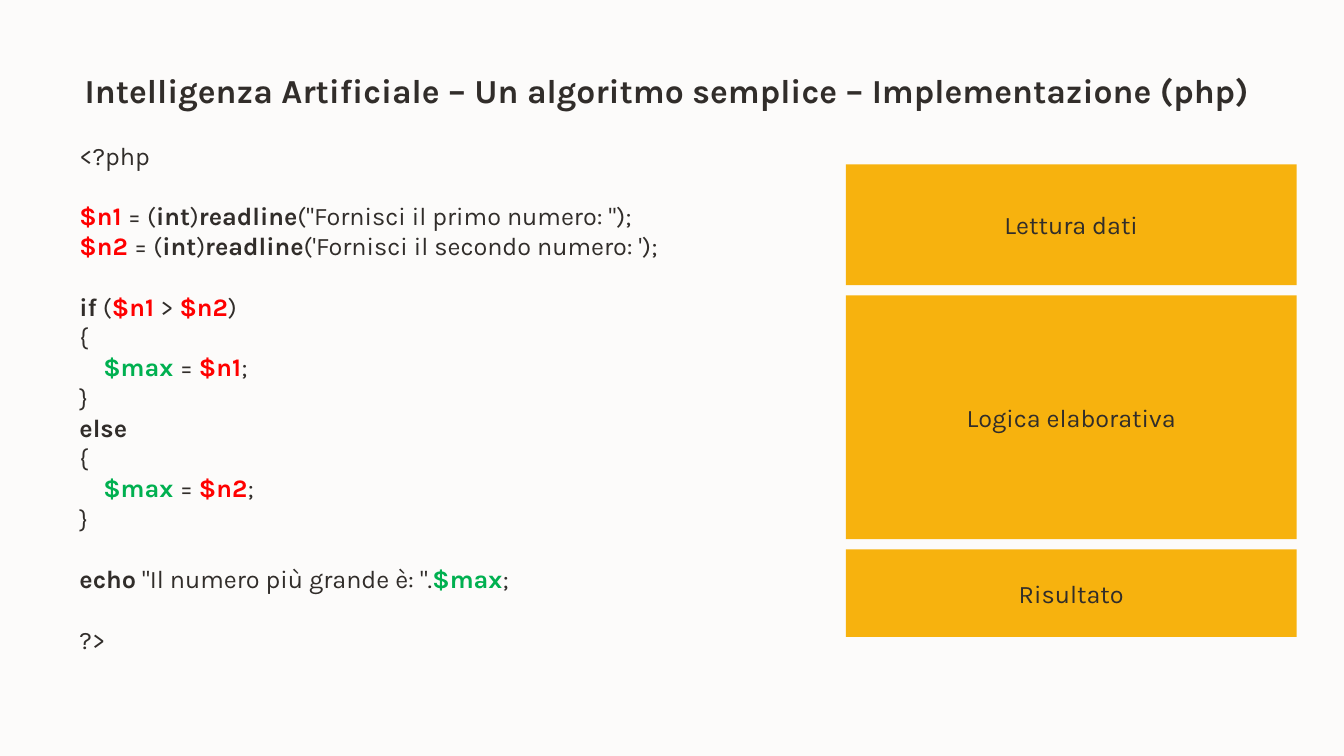
"""Build the slide that pairs a simple PHP algorithm with its three phases."""
from pptx import Presentation
from pptx.dml.color import RGBColor
from pptx.enum.shapes import MSO_SHAPE as Shape
from pptx.enum.text import MSO_ANCHOR as Anchor, MSO_AUTO_SIZE as AutoSize, PP_ALIGN as Align
from pptx.util import Inches, Pt

INK, PAPER, AMBER = "312D2A", "FCFBFA", "F7B20E"
STYLES = {
    "plain": (INK, False),
    "keyword": (INK, True),
    "input": ("FF0000", True),
    "result": ("00B050", True),
}

TITLE = "Intelligenza Artificiale – Un algoritmo semplice – Implementazione (php)"


def read_line(variable, prompt):
    return [(variable + " ", "input"), ("= (", "plain"), ("int", "keyword"),
            (")", "plain"), ("readline", "keyword"), (f"({prompt});", "plain")]


def assign_line(variable):
    return [("    ", "plain"), ("$max ", "result"), ("= ", "plain"),
            (variable, "input"), (";", "plain")]


OPEN, CLOSE = [("{", "plain")], [("}", "plain")]
CODE_BLOCKS = [
    [[("<?php", "plain")]],
    [read_line("$n1", '"Fornisci il primo numero: "'),
     read_line("$n2", "'Fornisci il secondo numero: '")],
    [[("if", "keyword"), (" (", "plain"), ("$n1 ", "input"), ("> ", "plain"),
      ("$n2", "input"), (")", "plain")],
     OPEN, assign_line("$n1"), CLOSE,
     [("else", "keyword")],
     OPEN, assign_line("$n2"), CLOSE],
    [[("echo", "keyword"), (' "Il numero più grande è: ".', "plain"),
      ("$max", "result"), (";", "plain")]],
    [[("?>", "plain")]],
]
BLOCK_GAP = Pt(21.6)

PHASES = [("Lettura dati", 1.2), ("Logica elaborativa", 2.42), ("Risultato", 0.87)]
PHASE_LEFT, PHASE_TOP, PHASE_WIDTH, PHASE_GAP = 8.39, 1.63, 4.47, 0.1


def color(hex_value):
    return RGBColor.from_string(hex_value)


def apply(target, values):
    for name, value in values.items():
        setattr(target, name, value)


def add_run(paragraph, text, style, size=18):
    run = paragraph.add_run()
    run.text = text
    ink, bold = STYLES[style]
    apply(run.font, {"name": "Karla", "size": Pt(size), "bold": bold})
    run.font.color.rgb = color(ink)


def add_title(slide):
    frame = slide.shapes.add_textbox(*map(Inches, (0.84, 0.2, 11.67, 0.9))).text_frame
    apply(frame, {"word_wrap": True, "vertical_anchor": Anchor.BOTTOM, "margin_left": 0,
                  "margin_right": 0, "margin_top": 0, "margin_bottom": 0})
    heading = frame.paragraphs[0]
    heading.line_spacing = 0.95
    add_run(heading, TITLE, "keyword", 24)


def add_code(slide):
    frame = slide.shapes.add_textbox(*map(Inches, (0.69, 1.34, 6.67, 5.25))).text_frame
    apply(frame, {"word_wrap": True, "auto_size": AutoSize.SHAPE_TO_FIT_TEXT})
    line = frame.paragraphs[0]
    for block_index, block in enumerate(CODE_BLOCKS):
        for line_index, tokens in enumerate(block):
            if block_index or line_index:
                line = frame.add_paragraph()
            if block_index and not line_index:
                line.space_before = BLOCK_GAP
            for text, style in tokens:
                add_run(line, text, style)


def add_phases(slide):
    top = PHASE_TOP
    for label, height in PHASES:
        phase = slide.shapes.add_shape(
            Shape.RECTANGLE, *map(Inches, (PHASE_LEFT, top, PHASE_WIDTH, height)))
        phase.shadow.inherit = False
        phase.fill.solid()
        phase.fill.fore_color.rgb = color(AMBER)
        phase.line.fill.background()
        phase.text_frame.vertical_anchor = Anchor.MIDDLE
        caption = phase.text_frame.paragraphs[0]
        caption.alignment = Align.CENTER
        add_run(caption, label, "plain")
        top += height + PHASE_GAP


def main():
    deck = Presentation()
    apply(deck, {"slide_width": Inches(13.33), "slide_height": Inches(7.5)})
    slide = deck.slides.add_slide(deck.slide_layouts[6])
    slide.background.fill.solid()
    slide.background.fill.fore_color.rgb = color(PAPER)
    add_title(slide)
    add_code(slide)
    add_phases(slide)
    deck.save("out.pptx")


if __name__ == "__main__":
    main()
